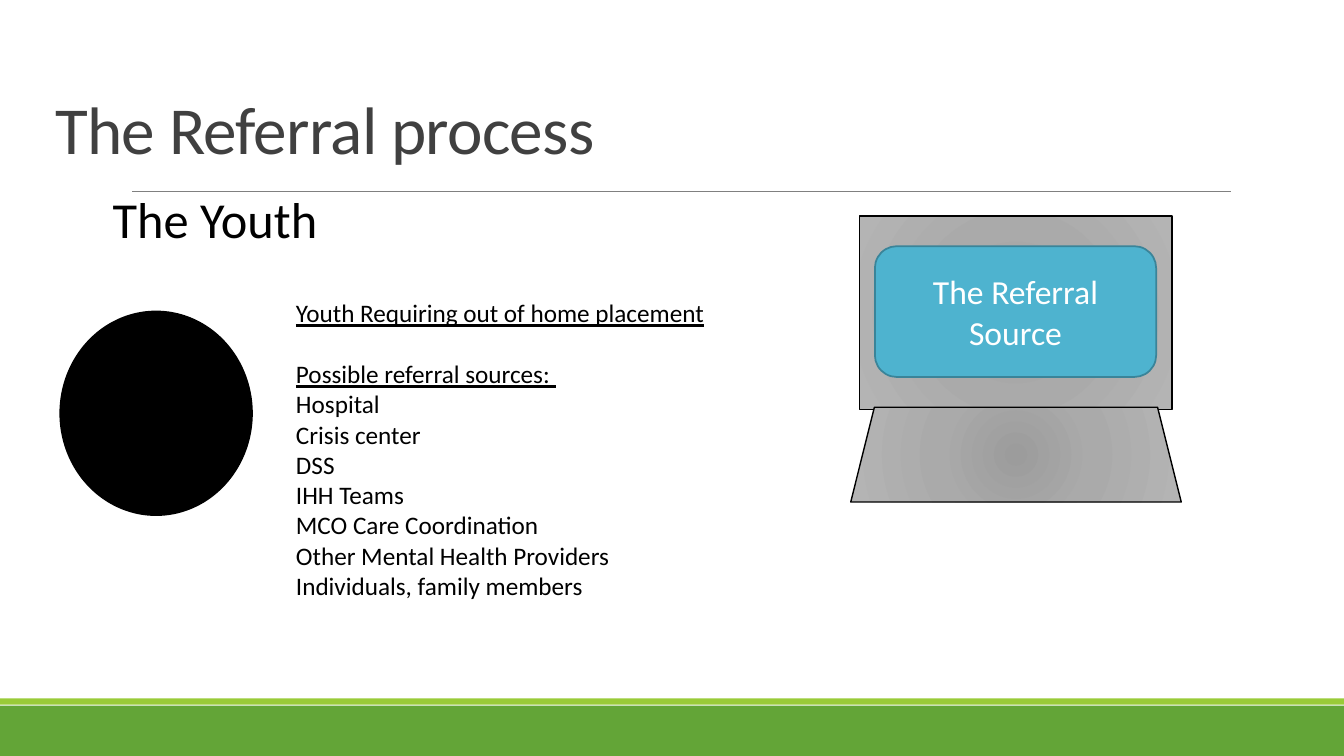
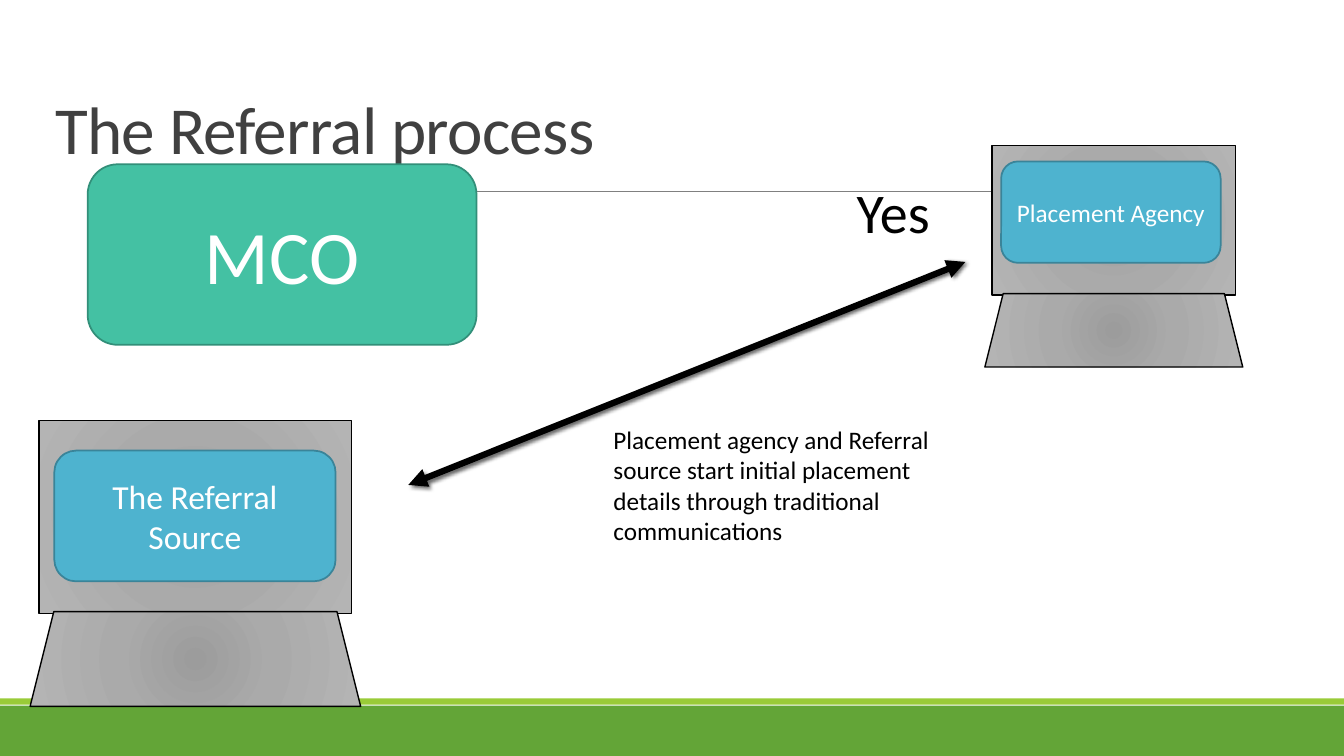
from dataclasses import dataclass

from pptx import Presentation
from pptx.dml.color import RGBColor
from pptx.enum.shapes import MSO_CONNECTOR as Connector, MSO_SHAPE as Preset
from pptx.enum.text import MSO_ANCHOR as Anchor, MSO_AUTO_SIZE as AutoSize, PP_ALIGN as Align
from pptx.oxml import parse_xml
from pptx.oxml.ns import nsdecls, qn
from pptx.util import Cm, Pt


@dataclass(frozen=True)
class Theme:
    """Colours, font and type sizes of the deck."""
    font: str = "Calibri"
    green: str = "63A537"
    lime: str = "99CB38"
    rule: str = "808080"
    heading: str = "404040"
    ink: str = "000000"
    paper: str = "FFFFFF"
    blue: str = "4EB3CF"
    blue_edge: str = "3A8499"
    teal: str = "44C1A3"
    teal_edge: str = "328F79"
    metal: tuple = ((0, "9C9C9C"), (45, "AAAAAA"), (100, "B4B4B4"))
    title_size: int = 48
    hero_size: int = 54
    answer_size: int = 40
    subtitle_size: int = 36
    label_size: int = 24
    body_size: int = 18


@dataclass(frozen=True)
class Box:
    """A rectangle in centimetres."""
    left: float
    top: float
    width: float
    height: float

    def inner(self, x, y, width, height):
        """Return the inner box given as fractions of this one."""
        return Box(self.left + x * self.width, self.top + y * self.height,
                   width * self.width, height * self.height)

    def lengths(self):
        """Return left, top, width and height as lengths."""
        return Cm(self.left), Cm(self.top), Cm(self.width), Cm(self.height)


THEME = Theme()
PAGE = Box(0, 0, 33.87, 19.05)
SOURCES = ("Hospital", "Crisis center", "DSS", "IHH Teams", "MCO Care Coordination",
           "Other Mental Health Providers", "Individuals, family members")


def rgb(code):
    """Turn a hex code into a colour."""
    return RGBColor.from_string(code)


def set_font(para, size, colour):
    """Set the deck font on a whole paragraph."""
    para.font.name = THEME.font
    para.font.size = Pt(size)
    para.font.color.rgb = rgb(colour)


def add_preset(page, preset, box, fill=None, edge=None, edge_width=1.25):
    """Draw a flat preset shape; without a fill it becomes metallic."""
    shape = page.shapes.add_shape(preset, *box.lengths())
    shape.shadow.inherit = False
    if fill:
        shape.fill.solid()
        shape.fill.fore_color.rgb = rgb(fill)
    else:
        fill_metal(shape)
    if edge:
        shape.line.color.rgb = rgb(edge)
        shape.line.width = Pt(edge_width)
    else:
        shape.line.fill.background()
    return shape


def fill_metal(shape):
    """Fill a shape with the grey radial gradient."""
    stops = "".join(f'<a:gs pos="{pos * 1000}"><a:srgbClr val="{code}"/></a:gs>'
                    for pos, code in THEME.metal)
    shape.fill.background()
    properties = shape.element.spPr
    properties.replace(properties.find(qn("a:noFill")), parse_xml(
        f'<a:gradFill {nsdecls("a")} rotWithShape="1"><a:gsLst>{stops}</a:gsLst>'
        '<a:path path="circle"><a:fillToRect l="100000" t="100000" r="100000" b="100000"/>'
        '</a:path></a:gradFill>'))


def add_label(shape, text, size):
    """Write white centred text in a shape."""
    frame = shape.text_frame
    frame.word_wrap = True
    frame.vertical_anchor = Anchor.MIDDLE
    para = frame.paragraphs[0]
    para.text = text
    para.alignment = Align.CENTER
    set_font(para, size, THEME.paper)


def add_text(page, box, lines, size, align=Align.LEFT):
    """Add a wrapped text box and return its paragraphs."""
    frame = page.shapes.add_textbox(*box.lengths()).text_frame
    frame.word_wrap = True
    frame.auto_size = AutoSize.SHAPE_TO_FIT_TEXT
    frame.text = "\n".join(lines)
    for para in frame.paragraphs:
        para.alignment = align
        set_font(para, size, THEME.ink)
    return frame.paragraphs


def add_line(page, start, end, colour, width, effects=""):
    """Draw a straight line between two points, with optional effects."""
    line = page.shapes.add_connector(Connector.STRAIGHT, *map(Cm, start + end))
    line.line.color.rgb = rgb(colour)
    line.line.width = Pt(width)
    line.element.spPr.append(parse_xml(
        f'<a:effectLst {nsdecls("a")}>{effects}</a:effectLst>'))
    return line


def add_double_arrow(page, start, end):
    """Draw a thick shadowed arrow pointing both ways."""
    shadow = ('<a:outerShdw blurRad="38100" dist="25400" dir="2700000">'
              f'<a:srgbClr val="{THEME.ink}"><a:alpha val="60000"/></a:srgbClr></a:outerShdw>')
    arrow = add_line(page, start, end, THEME.ink, 4.5, shadow)
    outline = arrow.element.spPr.find(qn("a:ln"))
    for tag in ("headEnd", "tailEnd"):
        outline.append(parse_xml(f'<a:{tag} {nsdecls("a")} type="triangle"/>'))


def add_laptop(page, box, text, size, inset=(0.073, 0.106)):
    """Draw a laptop with a labelled display."""
    add_preset(page, Preset.RECTANGLE, box.inner(0.027, 0, 0.945, 0.676),
               edge=THEME.ink, edge_width=1)
    display = add_preset(page, Preset.ROUNDED_RECTANGLE, box.inner(*inset, 0.851, 0.457),
                         THEME.blue, THEME.blue_edge)
    add_label(display, text, size)
    add_preset(page, Preset.TRAPEZOID, box.inner(0, 0.669, 1, 0.331),
               edge=THEME.ink, edge_width=1)


def dress_layout(layout, page):
    """Draw the bands and the rule, then hand them to the layout."""
    furniture = (
        add_preset(page, Preset.RECTANGLE, Box(0, 17.78, PAGE.width, 1.27), THEME.green),
        add_preset(page, Preset.RECTANGLE, Box(0, 17.6, PAGE.width, 0.16), THEME.lime),
        add_line(page, (3.33, 4.83), (31.01, 4.83), THEME.rule, 0.5),
    )
    for piece in furniture:
        layout.shapes.element.append(piece.element)


def set_title(page, text, width):
    """Place and format the title placeholder."""
    title = page.shapes.title
    title.left, title.top, title.width, title.height = Box(1.14, 0.48, width, 3.89).lengths()
    frame = title.text_frame
    frame.auto_size = AutoSize.NONE
    frame.word_wrap = True
    frame.vertical_anchor = Anchor.BOTTOM
    para = frame.paragraphs[0]
    para.text = text
    para.alignment = Align.LEFT
    para.line_spacing = 0.85
    set_font(para, THEME.title_size, THEME.heading)
    for span in title.element.iter(qn("a:r")):
        span.get_or_add_rPr().set("spc", "-50")


def add_youth(page, box):
    """Show the youth and the possible referral sources."""
    add_preset(page, Preset.SMILEY_FACE, Box(box.left, box.top + 3.23, 4.83, 5.13),
               THEME.ink, THEME.ink)
    lines = ("Youth Requiring out of home placement", "Possible referral sources: ") + SOURCES
    paras = add_text(page, Box(box.left + 5.69, box.top + 2.75, 13.97, 7.95),
                     lines, THEME.body_size)
    for para in paras[:2]:
        para.font.underline = True
    paras[1].space_before = Pt(22)
    add_text(page, Box(box.left + 1.07, box.top, 7.49, 1.8), ["The Youth"], THEME.subtitle_size)


def fill_youth_page(page):
    """Build the page on the youth and the referral source."""
    set_title(page, "The Referral process", 26.14)
    add_youth(page, Box(1.52, 4.62, 19.66, 10.7))
    add_laptop(page, Box(21.44, 5.44, 8.33, 7.21), "The Referral Source", THEME.label_size)


def fill_agency_page(page):
    """Build the page on the contact with the placement agency."""
    set_title(page, "The Referral process", 15.72)
    add_laptop(page, Box(0.76, 10.59, 8.33, 7.21), "The Referral Source", THEME.label_size)
    payer = add_preset(page, Preset.FLOWCHART_ALTERNATE_PROCESS, Box(2.21, 4.14, 9.8, 4.55),
                       THEME.teal, THEME.teal_edge)
    add_label(payer, "MCO", THEME.hero_size)
    add_laptop(page, Box(24.82, 3.66, 6.5, 5.59), "Placement Agency", THEME.body_size,
               (0.063, 0.073))
    add_text(page, Box(19.79, 4.34, 5.44, 1.96), ["Yes"], THEME.answer_size, Align.CENTER)
    add_text(page, Box(15.21, 10.57, 9.04, 3.33),
             ["Placement agency and Referral source start initial placement details "
              "through traditional communications"], THEME.body_size)
    add_double_arrow(page, (24.33, 6.6), (10.29, 12.22))


def main():
    """Build and save the deck."""
    deck = Presentation()
    deck.slide_width, deck.slide_height = Cm(PAGE.width), Cm(PAGE.height)
    layout = deck.slide_layouts.get_by_name("Title Only")
    pages = [deck.slides.add_slide(layout) for _ in range(2)]
    dress_layout(layout, pages[0])
    for page, fill_page in zip(pages, (fill_youth_page, fill_agency_page)):
        fill_page(page)
    deck.save("out.pptx")


if __name__ == "__main__":
    main()
